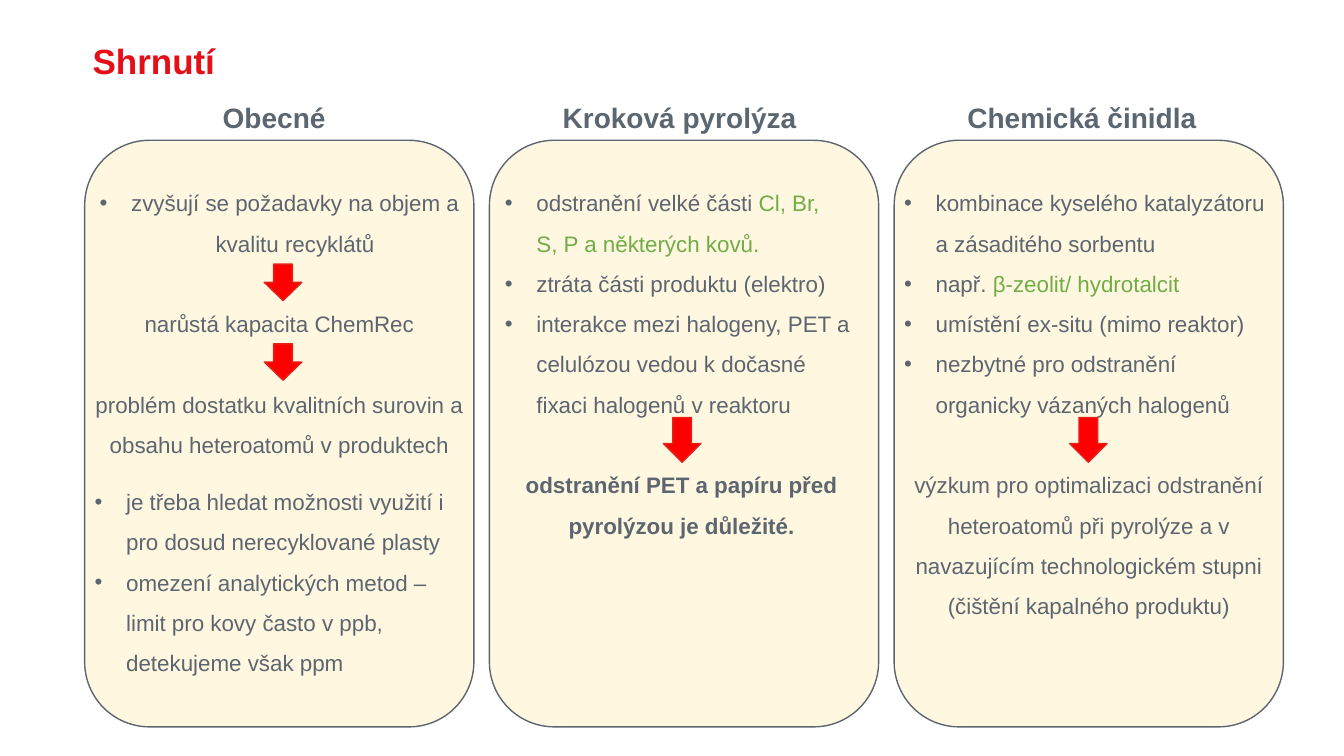
from lxml.etree import SubElement
from pptx import Presentation
from pptx.dml.color import RGBColor
from pptx.enum.shapes import MSO_SHAPE as Shape
from pptx.enum.text import MSO_ANCHOR as Anchor, PP_ALIGN as Align
from pptx.oxml.ns import qn
from pptx.util import Pt

COLORS = {
    "title": "E40F18", "text": "5C6670", "accent": "70AD47",
    "card": "FFF7E0", "arrow": "FF0000", "arrow_line": "E2231A",
}
FONT = "Arial"
INDENT = 22.5
ROW = 28.8  # height of one body line, left free for an arrow
CARD_LEFT, CARD_TOP, CARD_WIDTH, CARD_HEIGHT = 60.5, 100.2, 278, 419
CARD_PITCH = 289.1
ARROW_WIDTH = 26.8


def bullet(*spans, **options):
    return {"spans": spans, "bullet": True, "indent": INDENT, **options}


def centered(*spans, **options):
    return {"spans": spans, "format": {"alignment": Align.CENTER}, **options}


# Offsets are measured from the top left corner of each card
COLUMNS = [
    {
        "heading": "Obecné", "heading_x": 91.5, "body_x": 0, "body_width": 278,
        "paragraphs": [
            bullet("zvyšují se požadavky na objem a kvalitu recyklátů",
                   format={"alignment": Align.CENTER}),
            centered("narůstá kapacita ChemRec", before=ROW),
            centered("problém dostatku kvalitních surovin a obsahu "
                     "heteroatomů v produktech", before=ROW, after=12),
            bullet("je třeba hledat možnosti využití i pro dosud "
                   "nerecyklované plasty"),
            bullet("omezení analytických metod – limit pro kovy často v ppb, "
                   "detekujeme však ppm"),
        ],
        "arrow_x": 128.3, "arrow_tops": [88.5, 145.4], "arrow_height": 26,
    },
    {
        "heading": "Kroková pyrolýza", "heading_x": 45.2,
        "body_x": 4, "body_width": 266.5,
        "paragraphs": [
            bullet("odstranění velké části ", ("Cl, Br,", "accent")),
            {"spans": [("S, P a některých kovů.", "accent")], "indent": INDENT},
            bullet("ztráta části produktu (elektro)"),
            bullet("interakce mezi halogeny, PET a celulózou vedou k dočasné "
                   "fixaci halogenů v reaktoru"),
            centered("odstranění PET a papíru před pyrolýzou je důležité.",
                     before=ROW, bold=True),
        ],
        "arrow_x": 124.3, "arrow_tops": [198], "arrow_height": 32,
    },
    {
        "heading": "Chemická činidla", "heading_x": 45.2,
        "body_x": 0, "body_width": 278,
        "paragraphs": [
            bullet("kombinace kyselého katalyzátoru a zásaditého sorbentu"),
            bullet("např. ", ("β-zeolit/ hydrotalcit", "accent")),
            bullet("umístění ex-situ (mimo reaktor)"),
            bullet("nezbytné pro odstranění organicky vázaných halogenů"),
            centered("výzkum pro optimalizaci odstranění heteroatomů při "
                     "pyrolýze a v navazujícím technologickém stupni "
                     "(čištění kapalného produktu)", before=ROW),
        ],
        "arrow_x": 125.3, "arrow_tops": [198], "arrow_height": 32,
    },
]


def set_all(target, values):
    for name, value in values.items():
        setattr(target, name, value)


def add_span(para, text, size, color="text", bold=False):
    span = para.add_run()
    span.text = text
    set_all(span.font, {"name": FONT, "size": Pt(size), "bold": bold})
    span.font.color.rgb = RGBColor.from_string(COLORS[color])


def add_text_box(page, left, top, width, height, **frame_format):
    box = page.shapes.add_textbox(Pt(left), Pt(top), Pt(width), Pt(height))
    set_all(box.text_frame,
            {"word_wrap": True, "vertical_anchor": Anchor.TOP, **frame_format})
    return box.text_frame


def add_filled_shape(page, kind, box, fill, line):
    shape = page.shapes.add_shape(kind, *map(Pt, box))
    shape.shadow.inherit = False
    shape.fill.solid()
    shape.fill.fore_color.rgb = RGBColor.from_string(COLORS[fill])
    shape.line.color.rgb = RGBColor.from_string(COLORS[line])
    shape.line.width = Pt(1)


def add_body_paragraph(para, item):
    properties = para._p.get_or_add_pPr()
    indent = item.get("indent", 0)
    properties.set("marL", str(Pt(indent)))
    if item.get("bullet"):
        properties.set("indent", str(-Pt(indent)))
        SubElement(properties, qn("a:buFont")).set("typeface", FONT)
        SubElement(properties, qn("a:buChar")).set("char", "•")
    set_all(para, {
        "line_spacing": 1.5,
        "space_before": Pt(item.get("before", 0)),
        "space_after": Pt(item.get("after", 0)),
        **item.get("format", {}),
    })
    for part in item["spans"]:
        text, color = part if isinstance(part, tuple) else (part, "text")
        add_span(para, text, 16, color, item.get("bold", False))


def add_title(page, left, top, width, height):
    frame = add_text_box(page, left, top, width, height, margin_left=0,
                         margin_top=0, margin_right=0, margin_bottom=0)
    para = frame.paragraphs[0]
    para.line_spacing = 0.9
    add_span(para, "Shrnutí", 25, "title", True)


def add_column(page, column, left, top, width, height):
    # Card and its heading
    add_filled_shape(page, Shape.ROUNDED_RECTANGLE,
                     (left, top, width, height), "card", "text")
    heading = add_text_box(page, left + column["heading_x"], top - 31.7,
                           190, 31.5)
    add_span(heading.paragraphs[0], column["heading"], 20, bold=True)

    # Body text
    frame = add_text_box(page, left + column["body_x"], top + 22,
                         column["body_width"], height - 50)
    for index, item in enumerate(column["paragraphs"]):
        para = frame.add_paragraph() if index else frame.paragraphs[0]
        add_body_paragraph(para, item)

    # Arrows between the statements
    for offset in column["arrow_tops"]:
        add_filled_shape(page, Shape.DOWN_ARROW,
                         (left + column["arrow_x"], top + offset,
                          ARROW_WIDTH, column["arrow_height"]),
                         "arrow", "arrow_line")


def main():
    deck = Presentation()
    set_all(deck, {"slide_width": Pt(960), "slide_height": Pt(540)})
    page = deck.slides.add_slide(deck.slide_layouts[6])
    add_title(page, 66.2, 31.7, 827, 34)
    for index, column in enumerate(COLUMNS):
        add_column(page, column, CARD_LEFT + index * CARD_PITCH, CARD_TOP,
                   CARD_WIDTH, CARD_HEIGHT)
    deck.save("out.pptx")


if __name__ == "__main__":
    main()
